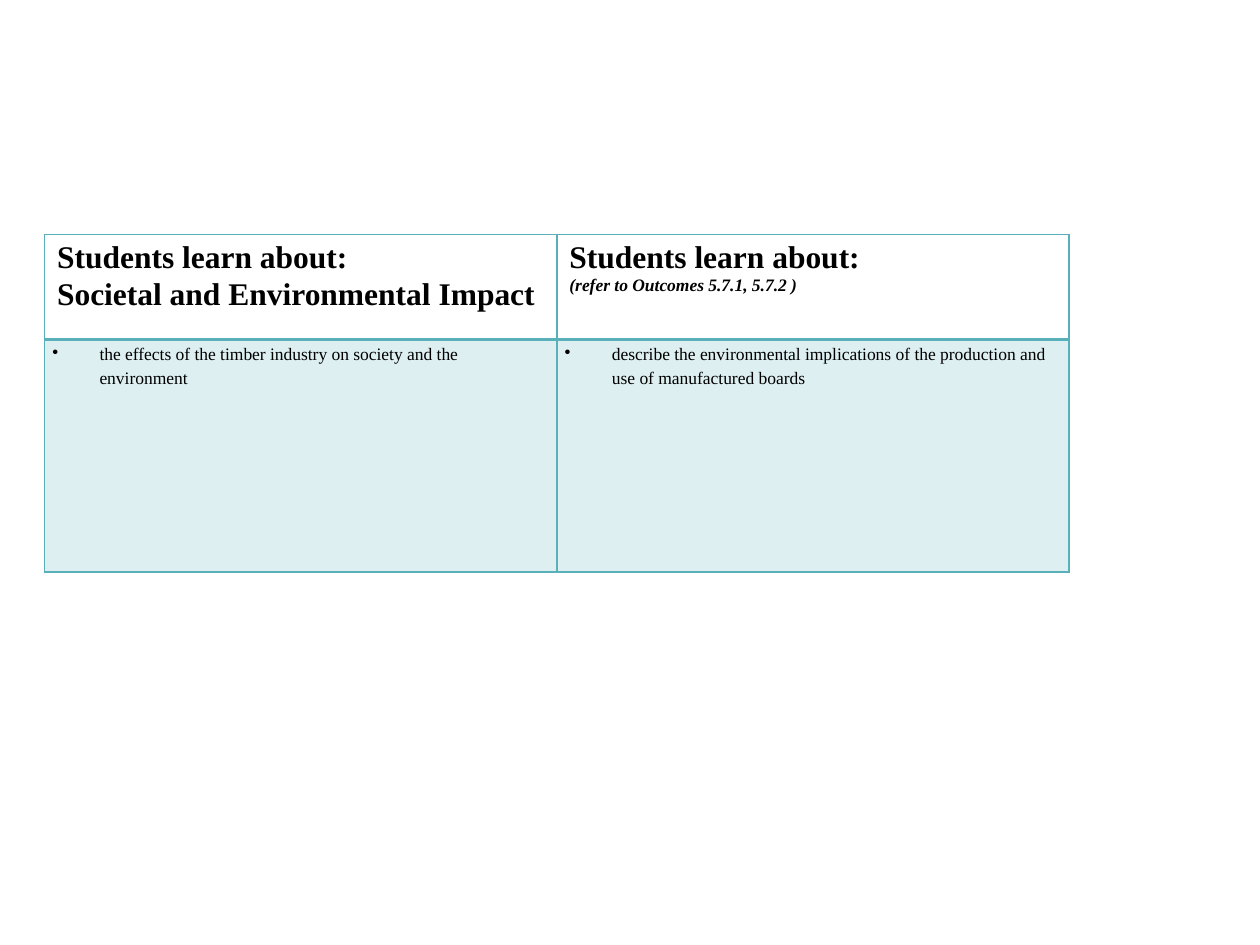
from lxml import etree
from pptx import Presentation
from pptx.dml import color
from pptx.oxml import ns
from pptx.util import Pt

COLORS = {"teal": "59B0B9", "ink": "000000"}
FONT = "Times New Roman"
HEADINGS = [
    [("Students learn about:", 18, False), ("Societal and Environmental Impact", 18, False)],
    [("Students learn about:", 18, False), ("(refer to Outcomes 5.7.1, 5.7.2 )", 10, True)],
]
TOPICS = [
    "the effects of the timber industry on society and the environment",
    "describe the environmental implications of the production and use of manufactured boards",
]


def rgb(name):
    return color.RGBColor.from_string(COLORS[name])


def add_element(parent, tag, **attributes):
    return etree.SubElement(parent, ns.qn(tag), attributes)


def style_runs(paragraph, size, bold=False, italic=False):
    for run in paragraph.runs:
        run.font.name = FONT
        run.font.size = Pt(size)
        run.font.bold = bold
        run.font.italic = italic
        run.font.color.rgb = rgb("ink")


def set_borders(cell, bottom):
    properties = cell._tc.get_or_add_tcPr()
    for position, (side, width) in enumerate(zip("LRTB", (1, 1, 1, bottom))):
        border = add_element(properties, f"a:ln{side}", w=str(Pt(width)))
        add_element(add_element(border, "a:solidFill"), "a:srgbClr", val=COLORS["teal"])
        properties.insert(position, border)


def fill_heading(cell, lines):
    cell.text_frame.text = "\n".join(line for line, _, _ in lines)
    for paragraph, (_, size, italic) in zip(cell.text_frame.paragraphs, lines):
        style_runs(paragraph, size, bold=True, italic=italic)
    if not lines[-1][2]:
        cell.text_frame.paragraphs[-1].space_before = Pt(1)
    cell.fill.background()
    set_borders(cell, bottom=2)


def fill_topic(cell, topic):
    cell.margin_left = cell.margin_right = Pt(4.5)
    cell.margin_top = cell.margin_bottom = Pt(0)
    paragraph = cell.text_frame.paragraphs[0]
    paragraph.text = topic
    paragraph.line_spacing = Pt(14)
    properties = paragraph._p.get_or_add_pPr()
    properties.set("marL", str(Pt(27)))
    properties.set("indent", str(-Pt(27)))
    add_element(properties, "a:buChar", char="•")
    add_element(add_element(properties, "a:tabLst"), "a:tab", pos=str(Pt(18)), algn="l")
    style_runs(paragraph, 10)
    cell.fill.solid()
    cell.fill.fore_color.rgb = rgb("teal")
    tint = cell._tc.tcPr.find(".//" + ns.qn("a:srgbClr"))
    add_element(tint, "a:alpha", val="20000")
    set_borders(cell, bottom=1)


def add_outcomes_table(slide, left, top, width, row_heights):
    frame = slide.shapes.add_table(
        len(row_heights), len(TOPICS), Pt(left), Pt(top), Pt(width), Pt(sum(row_heights)))
    table = frame.table
    table.first_row = table.horz_banding = False
    for row, height in zip(table.rows, row_heights):
        row.height = Pt(height)
    for column, (heading, topic) in enumerate(zip(HEADINGS, TOPICS)):
        fill_heading(table.cell(0, column), heading)
        fill_topic(table.cell(1, column), topic)


def main():
    presentation = Presentation()
    presentation.slide_width, presentation.slide_height = Pt(720), Pt(540)
    slide = presentation.slides.add_slide(presentation.slide_layouts[6])
    add_outcomes_table(slide, 25.4, 134, 585.6, (60, 133))
    presentation.save("out.pptx")


if __name__ == "__main__":
    main()
